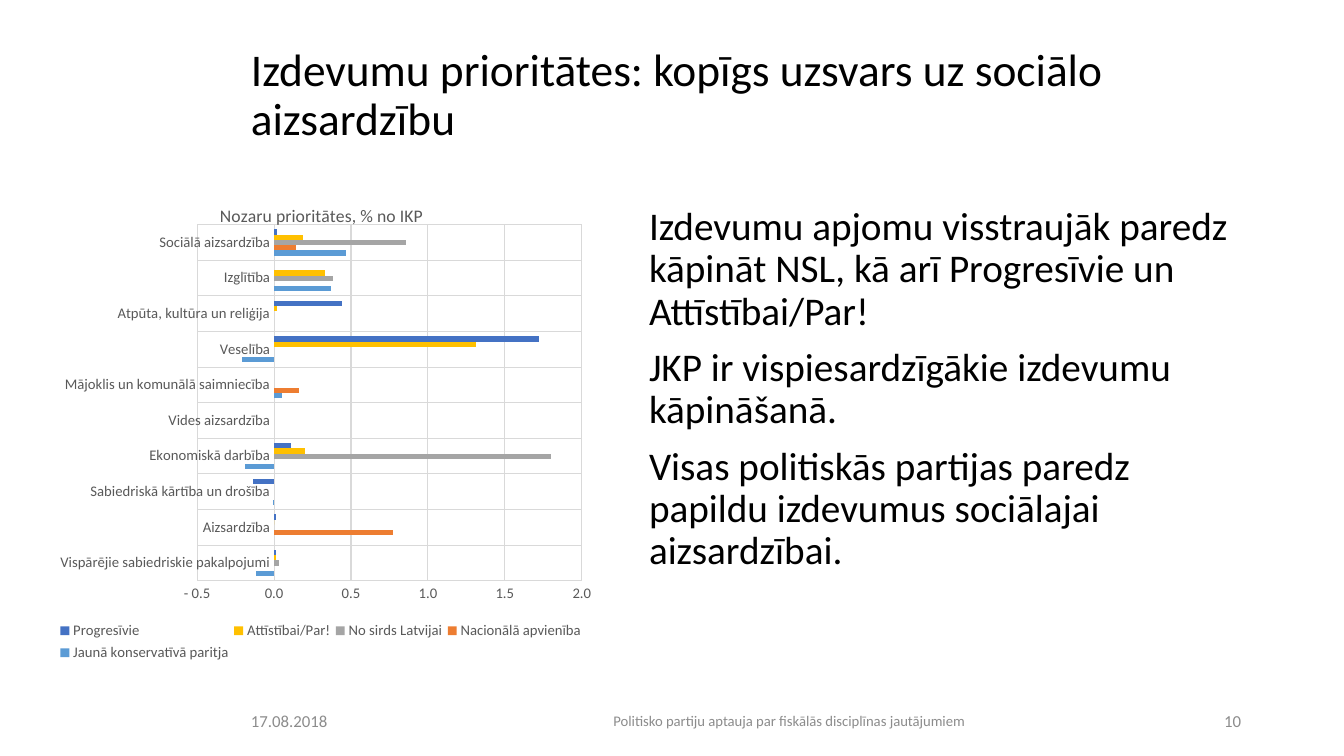
"""Builds the slide on spending priorities of political parties."""
from pptx import Presentation
from pptx.chart.data import CategoryChartData
from pptx.dml.color import RGBColor
from pptx.enum.chart import XL_CHART_TYPE, XL_LEGEND_POSITION, XL_TICK_MARK
from pptx.enum.text import MSO_ANCHOR, PP_ALIGN
from pptx.oxml import parse_xml
from pptx.oxml.ns import nsdecls, qn
from pptx.util import Inches, Pt

BLACK = RGBColor(0x00, 0x00, 0x00)
FOOTER_GREY = RGBColor(0x8C, 0x8C, 0x8C)
LABEL_GREY = RGBColor(0x59, 0x59, 0x59)
GRID_GREY = RGBColor(0xD9, 0xD9, 0xD9)
SKY = RGBColor(0x5B, 0x9B, 0xD5)
ORANGE = RGBColor(0xED, 0x7D, 0x31)
GREY = RGBColor(0xA5, 0xA5, 0xA5)
GOLD = RGBColor(0xFF, 0xC0, 0x00)
BLUE = RGBColor(0x44, 0x72, 0xC4)

CLUSTERED = XL_CHART_TYPE.BAR_CLUSTERED
BOTTOM = XL_LEGEND_POSITION.BOTTOM
NO_TICK = XL_TICK_MARK.NONE
TOP, MIDDLE = MSO_ANCHOR.TOP, MSO_ANCHOR.MIDDLE
LEFT, CENTER, RIGHT = PP_ALIGN.LEFT, PP_ALIGN.CENTER, PP_ALIGN.RIGHT

FONT = "Calibri"
WIDTH, HEIGHT = Inches(13.33), Inches(7.5)
TEXT_LEFT = 17.93
FOOTER_TOP, FOOTER_HEIGHT = 92.67, 5.33

TITLE = "Izdevumu prioritātes: kopīgs uzsvars uz sociālo aizsardzību"
FINDINGS = [
    "Izdevumu apjomu visstraujāk paredz kāpināt NSL, kā arī Progresīvie un Attīstībai/Par!",
    "JKP ir vispiesardzīgākie izdevumu kāpināšanā.",
    "Visas politiskās partijas paredz papildu izdevumus sociālajai aizsardzībai.",
]
FOOTERS = [
    ("17.08.2018", TEXT_LEFT, 12.3, 12, LEFT),
    ("Politisko partiju aptauja par fiskālās disciplīnas jautājumiem", 32.33, 52.8, 10.5, CENTER),
    ("10", 87.15, 5.93, 12, RIGHT),
]
SECTORS = [
    "Vispārējie sabiedriskie pakalpojumi", "Aizsardzība",
    "Sabiedriskā kārtība un drošība", "Ekonomiskā darbība",
    "Vides aizsardzība", "Mājoklis un komunālā saimniecība", "Veselība",
    "Atpūta, kultūra un reliģija", "Izglītība", "Sociālā aizsardzība",
]
PARTIES = [
    ("Jaunā konservatīvā paritja", SKY,
     [-0.12, None, -0.01, -0.19, None, 0.05, -0.21, None, 0.37, 0.47]),
    ("Nacionālā apvienība", ORANGE,
     [None, 0.77, None, None, None, 0.16, None, None, None, 0.14]),
    ("No sirds Latvijai", GREY,
     [0.03, None, None, 1.8, None, None, None, None, 0.38, 0.86]),
    ("Attīstībai/Par!", GOLD,
     [0.01, 0, None, 0.2, None, None, 1.31, 0.02, 0.33, 0.19]),
    ("Progresīvie", BLUE,
     [0.01, 0.01, -0.14, 0.11, None, None, 1.72, 0.44, None, 0.02]),
]
CHART_LAYOUTS = [
    ("title", 1, "", {"x": 0.33, "y": 0.01}),
    ("plotArea", 0, '<c:layoutTarget val="inner"/>',
     {"x": 0.296, "y": 0.061, "w": 0.666, "h": 0.742}),
    ("legend", 1, "", {"x": 0.05, "y": 0.88, "w": 0.92, "h": 0.1}),
]


def place(left, top, width, height):
    """Turn percentages of the slide into lengths."""
    return [int(share * side / 100) for share, side in
            zip((left, top, width, height), (WIDTH, HEIGHT) * 2)]


def set_all(target, values):
    """Set every named attribute of the target."""
    for name, value in values.items():
        setattr(target, name, value)


def style_font(font, size, color):
    """Set typeface, size, weight and colour."""
    set_all(font, {"name": FONT, "size": Pt(size), "bold": False})
    font.color.rgb = color


def add_text(page, area, paragraphs, size, color=BLACK, anchor=MIDDLE,
             align=LEFT, spacing=1.0, gap=0):
    """Add a wrapped text box with one paragraph per string."""
    frame = page.shapes.add_textbox(*place(*area)).text_frame
    set_all(frame, {"word_wrap": True, "vertical_anchor": anchor})
    for index, text in enumerate(paragraphs):
        para = frame.add_paragraph() if index else frame.paragraphs[0]
        set_all(para, {"alignment": align, "line_spacing": spacing,
                       "space_before": Pt(gap if index else 0)})
        span = para.add_run()
        span.text = text
        style_font(span.font, size, color)


def style_axis(axis):
    """Give an axis pale gridlines, grey labels and no ticks."""
    set_all(axis, {"has_major_gridlines": True, "major_tick_mark": NO_TICK,
                   "minor_tick_mark": NO_TICK})
    style_font(axis.tick_labels.font, 10.5, LABEL_GREY)
    for line in (axis.major_gridlines.format.line, axis.format.line):
        line.color.rgb = GRID_GREY
        line.width = Pt(0.75)


def pin_part(chart, tag, index, target, shares):
    """Pin a part of the chart to fixed shares of the chart's size."""
    part = chart.element.find(".//" + qn(f"c:{tag}"))
    for layout in part.findall(qn("c:layout")):
        part.remove(layout)
    modes = "".join(f'<c:{side}Mode val="edge"/>' for side in "xy")
    sizes = "".join(f'<c:{side} val="{share}"/>' for side, share in shares.items())
    part.insert(index, parse_xml(
        f'<c:layout {nsdecls("c")}><c:manualLayout>'
        f"{target}{modes}{sizes}</c:manualLayout></c:layout>"))


def add_priorities_chart(page, area):
    """Add the clustered bars of sector priorities by party."""
    data = CategoryChartData()
    data.categories = SECTORS
    for name, _, values in PARTIES:
        data.add_series(name, values)
    chart = page.shapes.add_chart(CLUSTERED, *place(*area), data).chart
    style_font(chart.font, 10.5, BLACK)
    set_all(chart, {"has_title": True, "has_legend": True})

    title = chart.chart_title.text_frame
    title.text = "Nozaru prioritātes, % no IKP"
    style_font(title.paragraphs[0].runs[0].font, 12.6, LABEL_GREY)
    set_all(chart.legend, {"position": BOTTOM, "include_in_layout": False})
    style_font(chart.legend.font, 10.5, LABEL_GREY)

    plot = chart.plots[0]
    set_all(plot, {"gap_width": 182, "overlap": 0, "vary_by_categories": False})
    for series, (_, color, _) in zip(plot.series, PARTIES):
        series.invert_if_negative = False
        series.format.fill.solid()
        series.format.fill.fore_color.rgb = color

    for axis in (chart.category_axis, chart.value_axis):
        style_axis(axis)
    set_all(chart.value_axis, {"minimum_scale": -0.5, "maximum_scale": 2, "major_unit": 0.5})
    set_all(chart.value_axis.tick_labels,
            {"number_format": '0.0;"- "0.0', "number_format_is_linked": False})
    chart.value_axis.format.line.fill.background()
    for tag, index, target, shares in CHART_LAYOUTS:
        pin_part(chart, tag, index, target, shares)


def main():
    """Build and save the slide."""
    deck = Presentation()
    set_all(deck, {"slide_width": WIDTH, "slide_height": HEIGHT})
    page = deck.slides.add_slide(deck.slide_layouts[6])
    add_text(page, (TEXT_LEFT, 5.33, 75.15, 14.8), [TITLE], 32.4, spacing=0.9)
    add_text(page, (47.55, 26.67, 45.6, 63.47), FINDINGS, 28,
             anchor=TOP, spacing=0.9, gap=10)
    for text, left, width, size, align in FOOTERS:
        add_text(page, (left, FOOTER_TOP, width, FOOTER_HEIGHT), [text], size,
                 FOOTER_GREY, align=align)
    add_priorities_chart(page, (1.95, 25.87, 42.98, 63.47))
    deck.save("out.pptx")


if __name__ == "__main__":
    main()
